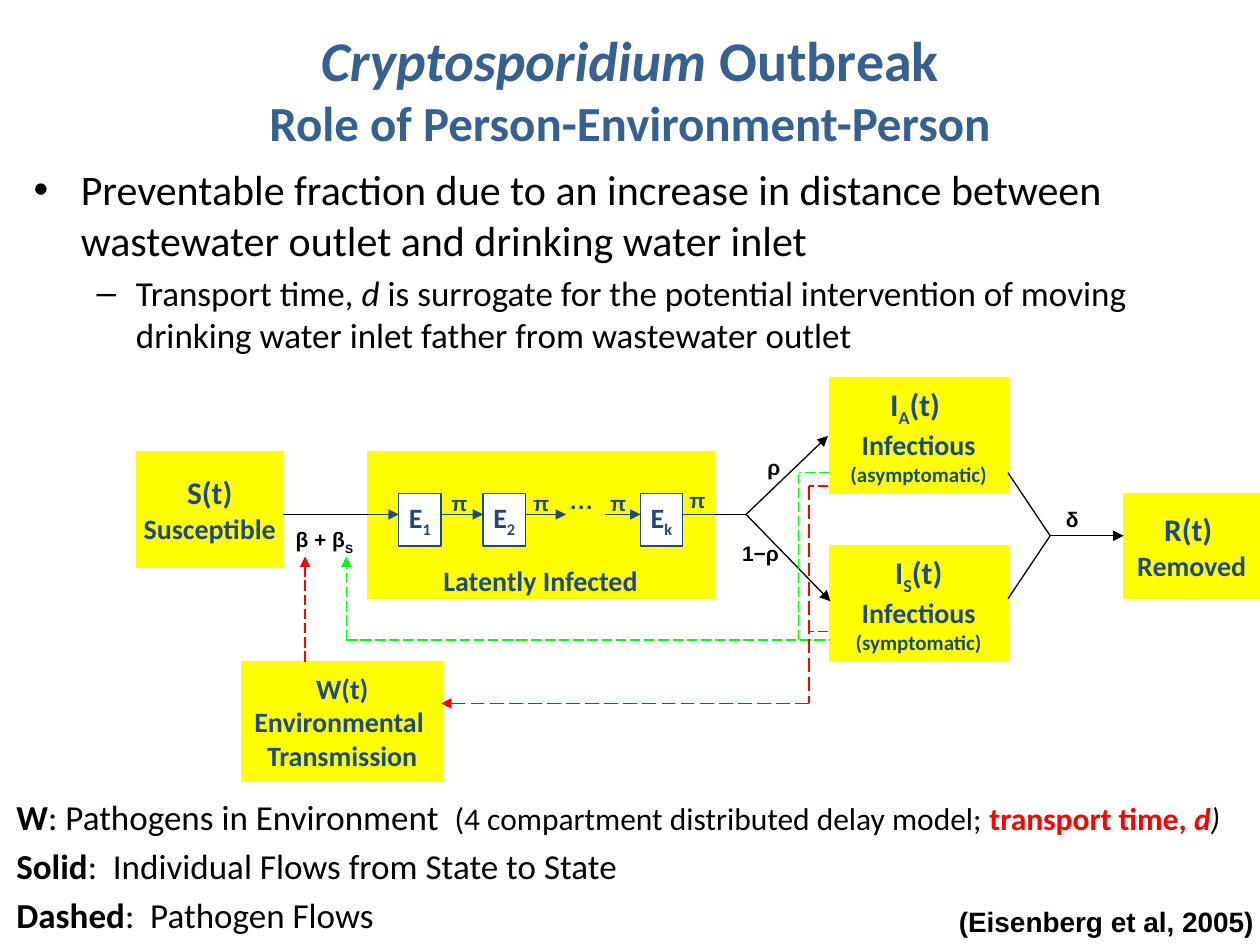
from collections import namedtuple

from lxml import etree
from pptx import Presentation
from pptx import util as u
from pptx.dml.color import RGBColor
from pptx.enum import dml, shapes, text
from pptx.oxml import ns

BLACK = RGBColor(0x00, 0x00, 0x00)
WHITE = RGBColor(0xFF, 0xFF, 0xFF)
NAVY = RGBColor(0x1F, 0x49, 0x7D)
TITLE_BLUE = RGBColor(0x37, 0x60, 0x92)
YELLOW = RGBColor(0xFF, 0xFF, 0x00)
RED = RGBColor(0xFF, 0x00, 0x00)
GREEN = RGBColor(0x00, 0xFF, 0x00)

Box = namedtuple("Box", "left top width height")  # centimetres
SUBSCRIPT = {"baseline": -25}
LEFT, CENTER = text.PP_ALIGN.LEFT, text.PP_ALIGN.CENTER
TOP, MIDDLE = text.MSO_ANCHOR.TOP, text.MSO_ANCHOR.MIDDLE


def inside(box, left, top, width, height):
    return Box(box.left + left, box.top + top, width, height)


def lengths(box):
    return [u.Cm(value) for value in box]


def add_xml(parent, tag, **attributes):
    return etree.SubElement(parent, ns.qn(tag), **attributes)


def write(shape, lines, align=LEFT, anchor=TOP, wrap=True, inset=None, **style):
    """Fill a shape; each line is a list of (text, format overrides) runs."""
    frame = shape.text_frame
    frame.word_wrap = wrap
    frame.vertical_anchor = anchor
    if inset is not None:
        frame.margin_left = frame.margin_right = u.Cm(inset)
        frame.margin_top = frame.margin_bottom = u.Cm(inset)
    for index, line in enumerate(lines):
        paragraph = frame.add_paragraph() if index else frame.paragraphs[0]
        paragraph.alignment = align
        for words, changes in line:
            add_run(paragraph, words, **{**style, **changes})
    return frame.paragraphs


def add_run(paragraph, words, size=18, font="Calibri", color=BLACK,
            bold=False, italic=False, baseline=0):
    run = paragraph.add_run()
    run.text = words
    run.font.size = u.Pt(size)
    run.font.name = font
    run.font.color.rgb = color
    run.font.bold = bold
    run.font.italic = italic
    if baseline:
        run.font._element.set("baseline", str(baseline * 1000))


def add_text(slide, box, lines, **style):
    return write(slide.shapes.add_textbox(*lengths(box)), lines, **style)


def add_state(slide, box, lines=(), fill=YELLOW, outline=YELLOW):
    shape = slide.shapes.add_shape(shapes.MSO_SHAPE.RECTANGLE, *lengths(box))
    shape.shadow.inherit = False
    shape.fill.solid()
    shape.fill.fore_color.rgb = fill
    shape.line.color.rgb = outline
    shape.line.width = u.Pt(0.75)
    return write(shape, lines, align=CENTER, anchor=MIDDLE, wrap=False,
                 size=16, color=NAVY, bold=True)


def add_flow(slide, box, start, end, color=BLACK, arrow=False, dashed=False, width=0.75):
    points = [u.Cm(origin + offset) for point in (start, end)
              for origin, offset in zip(box, point)]
    connector = slide.shapes.add_connector(shapes.MSO_CONNECTOR.STRAIGHT, *points)
    connector.line.color.rgb = color
    connector.line.width = u.Pt(width)
    if dashed:
        connector.line.dash_style = dml.MSO_LINE.LONG_DASH
    if arrow:
        add_xml(connector.line._get_or_add_ln(), "a:tailEnd", type="triangle")
    add_xml(connector._element.spPr, "a:effectLst")


def add_title(slide, box):
    paragraph = add_text(slide, box, [[("Cryptosporidium", {"italic": True}), (" Outbreak", {})]],
                         align=CENTER, anchor=MIDDLE, size=32, color=TITLE_BLUE, bold=True)[0]
    paragraph.add_line_break()
    add_run(paragraph, "Role of Person-Environment-Person", size=28,
            color=TITLE_BLUE, bold=True)


def add_bullets(slide, box):
    paragraphs = add_text(slide, box, [
        [("Preventable fraction due to an increase in distance between "
          "wastewater outlet and drinking water inlet", {"size": 24})],
        [("Transport time, ", {}), ("d ", {"italic": True}),
         ("is surrogate for the potential intervention of moving "
          "drinking water inlet father from wastewater outlet", {})],
    ], size=20)
    paragraphs[1].level = 1
    paragraphs[1].space_before = u.Pt(4)
    for paragraph, mark, margin, hanging in zip(paragraphs, "•–", (0.95, 2.06), (0.95, 0.79)):
        properties = paragraph._p.get_or_add_pPr()
        properties.set("marL", str(u.Cm(margin)))
        properties.set("indent", str(-u.Cm(hanging)))
        add_xml(properties, "a:buFont", typeface="Arial")
        add_xml(properties, "a:buChar", char=mark)


def add_states(slide, box):
    add_state(slide, inside(box, 4.66, 1.48, 6.99, 2.96))
    susceptible = add_state(slide, inside(box, 0, 1.48, 2.96, 2.33),
                            [[("S(t)", {"size": 18})], [("Susceptible", {})]])
    susceptible[1].space_after = u.Pt(8)
    for left, stage in ((5.29, "1"), (6.99, "2"), (10.16, "k")):
        add_state(slide, inside(box, left, 2.33, 0.85, 1.06),
                  [[("E", {}), (stage, SUBSCRIPT)]], fill=WHITE, outline=NAVY)
    for top, letter, rest, kind in ((0, "A", "(t) ", "(asymptomatic)"),
                                    (3.39, "S", "(t)", "(symptomatic)")):
        add_state(slide, inside(box, 13.97, top, 3.6, 2.33), [
            [("I", {"size": 18}), (letter, {"size": 18, **SUBSCRIPT}), (rest, {"size": 18})],
            [("Infectious", {})],
            [(kind, {"size": 12})]])
    add_state(slide, inside(box, 19.9, 2.33, 2.75, 2.12),
              [[("R(t) ", {"size": 18})], [("Removed", {})]])
    add_state(slide, inside(box, 2.12, 5.72, 4.06, 2.41),
              [[("W(t)", {})], [("Environmental ", {})], [("Transmission", {})]])


def add_individual_flows(slide, box):
    axis, fork, merge = 2.75, (12.29, 2.75), (18.42, 3.18)
    for start, end, color, arrow in (
            (2.96, 4.66, BLACK, False), (4.66, 5.29, NAVY, True), (6.14, 6.99, NAVY, True),
            (7.84, 8.66, NAVY, True), (9.45, 10.16, NAVY, True),
            (11.01, 11.65, NAVY, False), (11.65, fork[0], BLACK, False)):
        add_flow(slide, box, (start, axis), (end, axis), color, arrow)
    for target in ((13.94, 1.17), (13.99, 4.5)):
        add_flow(slide, box, fork, target, arrow=True)
    for top in (1.91, 4.45):
        add_flow(slide, box, (17.57, top), merge)
    add_flow(slide, box, merge, (19.9, merge[1]), arrow=True)


def add_pathogen_flows(slide, box):
    for start, end, color, arrow, width in (
            ((13.97, 1.91), (13.35, 1.91), GREEN, False, 0.75),
            ((13.35, 5.28), (13.35, 1.91), GREEN, False, 0.75),
            ((4.23, 5.28), (13.97, 5.28), GREEN, False, 0.75),
            ((4.23, 5.28), (4.23, 3.6), GREEN, True, 0.75),
            ((3.4, 5.72), (3.4, 3.6), RED, True, 0.75),
            ((13.94, 2.18), (13.56, 2.18), RED, False, 0.75),
            ((13.94, 5.11), (13.56, 5.11), RED, False, 0.75),
            ((13.56, 2.18), (13.56, 6.56), RED, False, 1),
            ((13.56, 6.56), (6.14, 6.56), RED, True, 1)):
        add_flow(slide, box, start, end, color, arrow, dashed=True, width=width)


def add_rates(slide, box):
    rate = {"size": 12, "font": "Arial", "bold": True, "inset": 0.03}
    for left, top in ((6.32, 2.24), (7.97, 2.24), (9.52, 2.24), (11.12, 2.18)):
        add_text(slide, inside(box, left, top, 0.43, 0.66), [[("π", {})]], color=NAVY, **rate)
    for words, left, top, width in (("δ", 18.71, 2.57, 0.43), ("ρ", 12.69, 1.52, 0.43),
                                    ("1−ρ", 12.18, 3.25, 0.94)):
        add_text(slide, inside(box, left, top, width, 0.66), [[(words, {})]], **rate)
    add_text(slide, inside(box, 3.18, 2.97, 2.03, 1.04),
             [[("β + β", {}), ("S", SUBSCRIPT)]], **rate)
    add_text(slide, inside(box, 8.48, 1.9, 1.14, 1.27), [[("...", {})]], color=NAVY)
    add_text(slide, inside(box, 5.94, 3.61, 5.92, 0.94),
             [[("Latently Infected", {})]], size=16, color=NAVY, bold=True)


def add_diagram(slide, box):
    for add_part in (add_states, add_individual_flows, add_pathogen_flows, add_rates):
        add_part(slide, box)


def add_legend(slide, box):
    bold, red = {"bold": True}, {"size": 18, "color": RED, "bold": True}
    paragraphs = add_text(slide, box, [
        [("W", bold), (": Pathogens in Environment  ", {}),
         ("(4 compartment distributed delay model; ", {"size": 18}),
         ("transport time, ", red), ("d", {**red, "italic": True}),
         (")", {"size": 18, "italic": True})],
        [("Solid", bold), (":  Individual Flows from State to State", {})],
        [("Dashed", bold), (":  Pathogen Flows", {})],
    ], size=20)
    for index, paragraph in enumerate(paragraphs):
        paragraph.line_spacing = 0.75
        paragraph.space_before = u.Pt(10 if index else 0)


def add_citation(slide, box):
    add_text(slide, box, [[("(Eisenberg et al, 2005)", {})]],
             wrap=False, size=16, font="Arial", bold=True)


def main():
    presentation = Presentation()
    presentation.slide_width, presentation.slide_height = u.Cm(25.4), u.Cm(19.05)
    slide = presentation.slides.add_slide(presentation.slide_layouts[6])
    add_title(slide, Box(1.27, 0.2, 22.86, 3.18))
    add_diagram(slide, Box(2.75, 7.62, 22.65, 8.13))
    add_bullets(slide, Box(0.43, 3.18, 24.97, 4.45))
    add_citation(slide, Box(19.08, 18.11, 6.53, 0.94))
    add_legend(slide, Box(0.08, 16.1, 25.32, 3))
    presentation.save("out.pptx")


if __name__ == "__main__":
    main()
